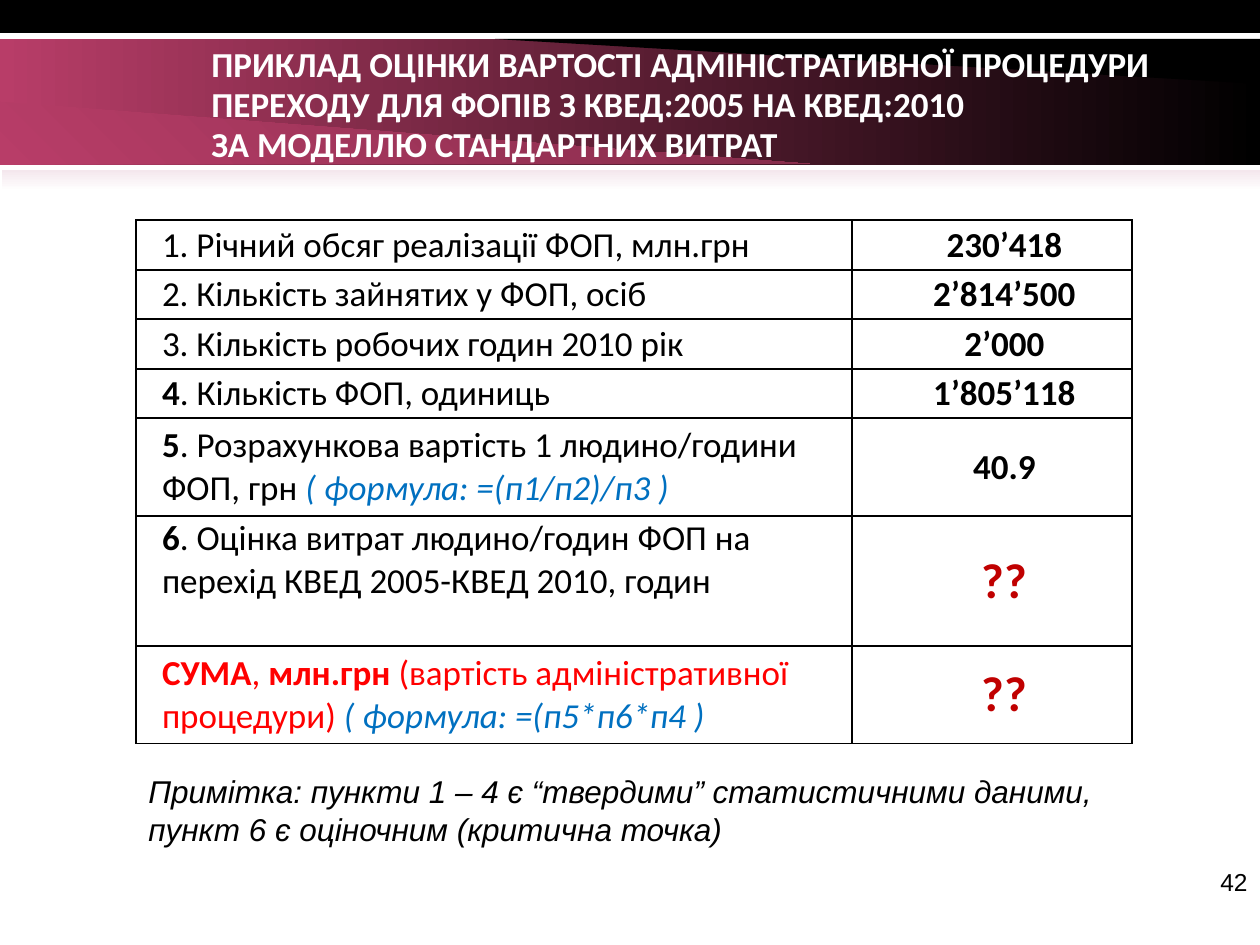
from dataclasses import dataclass
from typing import NamedTuple

from lxml import etree
from pptx import Presentation
from pptx.dml.color import RGBColor
from pptx.enum.shapes import MSO_SHAPE
from pptx.enum.text import MSO_ANCHOR, PP_ALIGN
from pptx.oxml.ns import qn
from pptx.util import Pt

RECT = MSO_SHAPE.RECTANGLE
TOP, MIDDLE = MSO_ANCHOR.TOP, MSO_ANCHOR.MIDDLE
LEFT, CENTER, RIGHT = PP_ALIGN.LEFT, PP_ALIGN.CENTER, PP_ALIGN.RIGHT
SCALE = 914400 / 126


@dataclass(frozen=True)
class Theme:
    black: str = "000000"
    white: str = "FFFFFF"
    rose: str = "B83D68"
    wine: str = "842C4A"
    blush: str = "F4E7ED"
    red: str = "FF0000"
    dark: str = "C00000"
    blue: str = "0070C0"
    main: str = "Calibri"
    plain: str = "Arial"
    body: int = 20
    mark: int = 28
    note: int = 18
    page: int = 14
    lead: int = 23


T = Theme()


class Box(NamedTuple):
    x: int
    y: int
    w: int
    h: int


class Paint(NamedTuple):
    first: str
    last: str = ""
    angle: int = 0


class Run(NamedTuple):
    text: str
    bold: bool = False
    italic: bool = False
    color: str = T.black


class Row(NamedTuple):
    height: int
    label: list[Run]
    value: str
    size: int = T.body
    color: str = T.black
    anchor: MSO_ANCHOR = MIDDLE


class Band(NamedTuple):
    box: Box
    paint: Paint


class Wedge(NamedTuple):
    points: list[tuple[int, int]]
    paint: Paint


class Note(NamedTuple):
    box: Box
    lines: list[str]
    font: str
    size: int
    color: str = T.black
    bold: bool = False
    italic: bool = False
    align: PP_ALIGN = LEFT
    lead: int = 0


BANDS = [
    Band(Box(0, 39, 1260, 126), Paint(T.rose, T.black)),
    Band(Box(0, 0, 1260, 33), Paint(T.black)),
    Band(Box(2, 170, 1258, 21), Paint(T.blush, T.white, 270)),
]
WEDGES = [
    Wedge([(1237, 39), (495, 39), (1260, 84), (1260, 39)], Paint(T.black)),
    Wedge([(24, 164), (810, 164), (0, 102), (0, 164)],
          Paint(T.rose, T.wine, 45)),
]
GRID = Box(136, 220, 996, 524)
COLS = [716, 280]
INDENT = 25
ROWS = [
    Row(50, [Run("1. Річний обсяг реалізації ФОП, млн.грн")], "230’418"),
    Row(49, [Run("2. Кількість зайнятих у ФОП, осіб")], "2’814’500"),
    Row(50, [Run("3. Кількість робочих годин 2010 рік")], "2’000"),
    Row(49, [Run("4", True), Run(". Кількість ФОП, одиниць")], "1’805’118"),
    Row(98, [Run("5", True),
             Run(". Розрахункова вартість 1 людино/години ФОП, грн "),
             Run("( формула: =(п1/п2)/п3 )", False, True, T.blue)], "40.9"),
    Row(130, [Run("6", True),
              Run(". Оцінка витрат людино/годин ФОП на перехід "
                  "КВЕД 2005-КВЕД 2010, годин")],
        "??", T.mark, T.dark, TOP),
    Row(98, [Run("СУМА", True, False, T.red), Run(", ", color=T.red),
             Run("млн.грн", True, False, T.red),
             Run(" (вартість адміністративної процедури) ", color=T.red),
             Run("( формула: =(п5*п6*п4 )", False, True, T.blue)],
        "??", T.mark, T.dark),
]
NOTES = [
    Note(Box(199, 38, 998, 140),
         ["ПРИКЛАД ОЦІНКИ ВАРТОСТІ АДМІНІСТРАТИВНОЇ ПРОЦЕДУРИ "
          "ПЕРЕХОДУ ДЛЯ ФОПІВ З КВЕД:2005 НА КВЕД:2010",
          "ЗА МОДЕЛЛЮ СТАНДАРТНИХ ВИТРАТ"],
         T.main, T.body, T.white, bold=True, lead=T.lead),
    Note(Box(136, 766, 1008, 89),
         ["Примітка: пункти 1 – 4 є “твердими” статистичними даними, "
          "пункт 6 є оціночним (критична точка)"],
         T.plain, T.note, italic=True),
    Note(Box(966, 861, 294, 66), ["42"], T.plain, T.page, align=RIGHT),
]


def px(n: int) -> int:
    return round(n * SCALE)


def place(box: Box) -> list[int]:
    return [px(n) for n in box]


def coat(shape, paint: Paint) -> None:
    shape.shadow.inherit = False
    shape.line.fill.background()
    fill = shape.fill
    if not paint.last:
        fill.solid()
        fill.fore_color.rgb = RGBColor.from_string(paint.first)
        return
    fill.gradient()
    fill.gradient_angle = paint.angle
    for stop, tint in zip(fill.gradient_stops, (paint.first, paint.last)):
        stop.color.rgb = RGBColor.from_string(tint)


def draw_band(shapes, band: Band) -> None:
    coat(shapes.add_shape(RECT, *place(band.box)), band.paint)


def draw_wedge(shapes, wedge: Wedge) -> None:
    start, *rest = wedge.points
    path = shapes.build_freeform(*start, scale=SCALE)
    path.add_line_segments(rest, close=True)
    coat(path.convert_to_shape(), wedge.paint)


def style(font, name: str, size: int, color: str) -> None:
    font.name, font.size = name, Pt(size)
    font.color.rgb = RGBColor.from_string(color)


def draw_note(shapes, note: Note) -> None:
    frame = shapes.add_textbox(*place(note.box)).text_frame
    frame.word_wrap = True
    frame.text = "\n".join(note.lines)
    for para in frame.paragraphs:
        para.alignment = note.align
        if note.lead:
            para.line_spacing = Pt(note.lead)
        style(para.font, note.font, note.size, note.color)
        para.font.bold, para.font.italic = note.bold, note.italic


def edge(cell) -> None:
    props = cell._tc.get_or_add_tcPr()
    for spot, side in enumerate(("lnL", "lnR", "lnT", "lnB")):
        line = etree.Element(qn(f"a:{side}"), w=str(Pt(1)))
        fill = etree.SubElement(line, qn("a:solidFill"))
        etree.SubElement(fill, qn("a:srgbClr"), val=T.black)
        props.insert(spot, line)


def fill_cell(cell, runs: list[Run], size: int, align: PP_ALIGN,
              anchor: MSO_ANCHOR) -> None:
    cell.fill.background()
    edge(cell)
    cell.margin_left = cell.margin_right = cell.margin_top = px(1)
    cell.margin_bottom = 0
    cell.vertical_anchor = anchor
    para = cell.text_frame.paragraphs[0]
    para.alignment = align
    para._p.get_or_add_pPr().set("marL", str(px(INDENT)))
    style(para.font, T.main, size, runs[0].color)
    for item in runs:
        run = para.add_run()
        run.text = item.text
        run.font.bold, run.font.italic = item.bold, item.italic
        run.font.color.rgb = RGBColor.from_string(item.color)


def draw_grid(shapes) -> None:
    grid = shapes.add_table(len(ROWS), len(COLS), *place(GRID)).table
    grid.first_row = grid.horz_banding = False
    for col, width in zip(grid.columns, COLS):
        col.width = px(width)
    for line, row in zip(grid.rows, ROWS):
        line.height = px(row.height)
        label, value = line.cells
        fill_cell(label, row.label, T.body, LEFT, row.anchor)
        mark = Run(row.value, True, False, row.color)
        fill_cell(value, [mark], row.size, CENTER, MIDDLE)


def main() -> None:
    deck = Presentation()
    deck.slide_width, deck.slide_height = px(1260), px(945)
    shapes = deck.slides.add_slide(deck.slide_layouts[6]).shapes
    draw_band(shapes, BANDS[0])
    for wedge in WEDGES:
        draw_wedge(shapes, wedge)
    for band in BANDS[1:]:
        draw_band(shapes, band)
    draw_grid(shapes)
    for note in NOTES:
        draw_note(shapes, note)
    deck.save("out.pptx")


if __name__ == "__main__":
    main()
